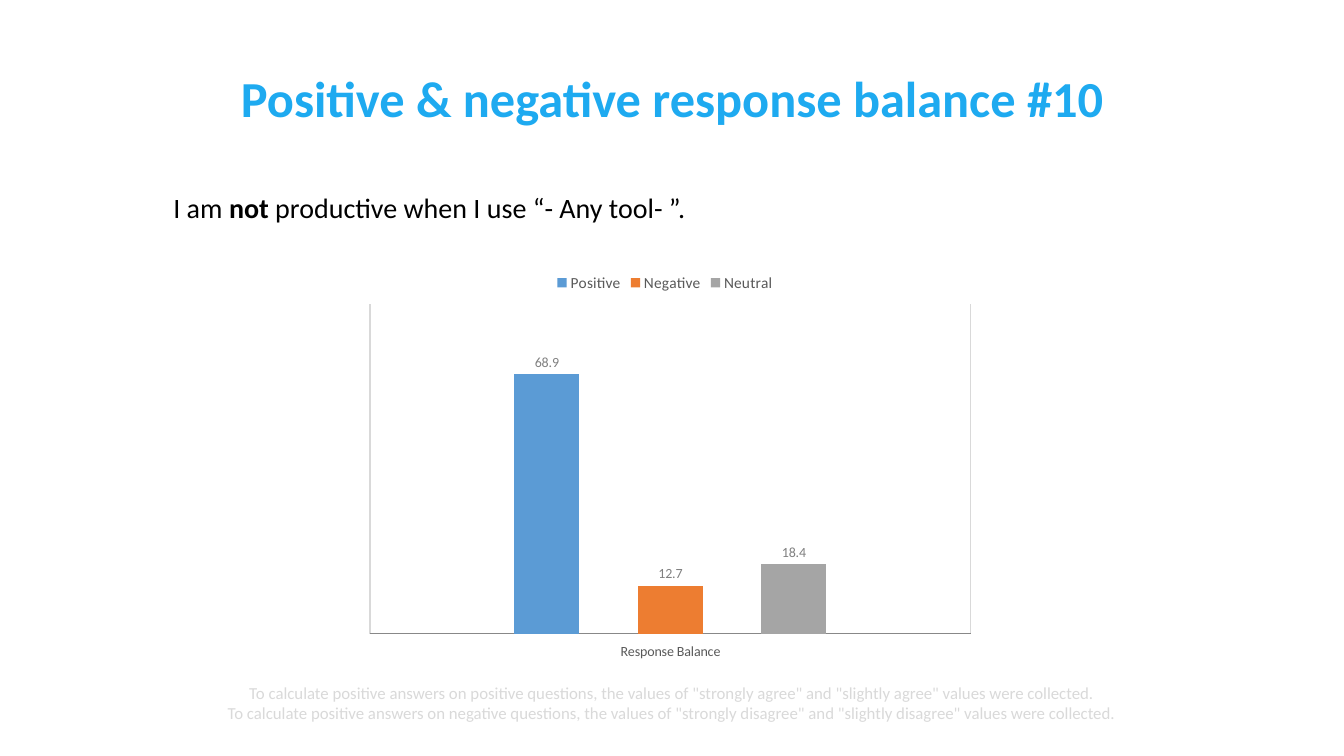
from lxml import etree
from pptx import Presentation
from pptx.chart.data import CategoryChartData
from pptx.dml.color import RGBColor
from pptx.enum.chart import (XL_CHART_TYPE, XL_LABEL_POSITION, XL_LEGEND_POSITION,
                             XL_TICK_LABEL_POSITION, XL_TICK_MARK)
from pptx.enum.text import MSO_ANCHOR, MSO_AUTO_SIZE, PP_ALIGN
from pptx.oxml.ns import qn
from pptx.util import Inches, Pt

CLUSTER = XL_CHART_TYPE.COLUMN_CLUSTERED
OUTSIDE = XL_LABEL_POSITION.OUTSIDE_END
ABOVE = XL_LEGEND_POSITION.TOP
LOW, HIDDEN = XL_TICK_LABEL_POSITION.LOW, XL_TICK_LABEL_POSITION.NONE
NO_TICK = XL_TICK_MARK.NONE
TOP, MIDDLE, BOTTOM = MSO_ANCHOR.TOP, MSO_ANCHOR.MIDDLE, MSO_ANCHOR.BOTTOM
LEFT, CENTER = PP_ALIGN.LEFT, PP_ALIGN.CENTER
GROW = MSO_AUTO_SIZE.SHAPE_TO_FIT_TEXT

THEME = {
    "font": "Calibri",
    "title": (36, "1EAAF0"),
    "body": (20, "000000"),
    "note": (12, "D9D9D9"),
    "chart": (10, "000000"),
    "axis": (10, "595959"),
    "legend": (11, "595959"),
    "label": (10, "808080"),
    "base": "888888",
    "grid": "D9D9D9",
}

TITLE = [[("Positive & negative response balance #10", True)]]
CLAIM = [[("I am ", False), ("not", True),
          (" productive when I use “- Any tool- ”.", False)]]
NOTES = [
    [('To calculate positive answers on positive questions, the values of '
      '"strongly agree" and "slightly agree" values were collected.', False)],
    [('To calculate positive answers on negative questions, the values of '
      '"strongly disagree" and "slightly disagree" values were collected.', False)],
]
GROUP = "Response Balance"
SERIES = [
    ("Positive", 68.9, "5B9BD5", "0.####"),
    ("Negative", 12.7, "ED7D31", "0.#"),
    ("Neutral", 18.4, "A5A5A5", "0.#"),
]
STEP = 17.5
PLOT = {"x": 0.023, "y": 0.107, "w": 0.972, "h": 0.83}


def style(font, role, bold=False):
    size, color = THEME[role]
    font.name = THEME["font"]
    font.size = Pt(size)
    font.bold = bold
    font.color.rgb = RGBColor.from_string(color)


def rule(line, color):
    line.width = Pt(1)
    line.color.rgb = RGBColor.from_string(color)


def write(slide, box, lines, role, anchor, align, spacing=1.0, before=0):
    frame = slide.shapes.add_textbox(*map(Inches, box)).text_frame
    frame.word_wrap = True
    frame.vertical_anchor = anchor
    frame.margin_left = frame.margin_right = Inches(0.05)
    frame.margin_top = frame.margin_bottom = Inches(0.05)
    for i, parts in enumerate(lines):
        para = frame.add_paragraph() if i else frame.paragraphs[0]
        para.alignment = align
        para.line_spacing = spacing
        para.space_before = Pt(before)
        for text, bold in parts:
            run = para.add_run()
            run.text = text
            style(run.font, role, bold)
    return frame


def place(chart):
    area = chart.element.find(".//" + qn("c:plotArea"))
    for old in area.findall(qn("c:layout")):
        area.remove(old)
    layout = etree.Element(qn("c:layout"))
    manual = etree.SubElement(layout, qn("c:manualLayout"))
    rules = [("layoutTarget", "inner"), ("xMode", "edge"), ("yMode", "edge")]
    for tag, value in rules + list(PLOT.items()):
        etree.SubElement(manual, qn("c:" + tag)).set("val", str(value))
    area.insert(0, layout)


def draw(slide, box):
    data = CategoryChartData()
    data.categories = [GROUP]
    for name, value, _, _ in SERIES:
        data.add_series(name, [value])
    chart = slide.shapes.add_chart(CLUSTER, *map(Inches, box), data).chart
    style(chart.font, "chart")
    chart.has_title = False
    chart.has_legend = True
    chart.legend.position = ABOVE
    chart.legend.include_in_layout = True
    style(chart.legend.font, "legend")

    base = chart.category_axis
    base.tick_label_position = LOW
    base.major_tick_mark = NO_TICK
    style(base.tick_labels.font, "axis")
    rule(base.format.line, THEME["base"])
    base.has_major_gridlines = True
    rule(base.major_gridlines.format.line, THEME["grid"])

    scale = chart.value_axis
    scale.minimum_scale, scale.maximum_scale = 0, 5 * STEP
    scale.major_unit = STEP
    scale.has_major_gridlines = False
    scale.major_tick_mark = NO_TICK
    scale.tick_label_position = HIDDEN
    scale.format.line.fill.background()

    plot = chart.plots[0]
    plot.gap_width, plot.overlap = 444, -90
    plot.vary_by_categories = False
    for bars, (_, _, color, form) in zip(plot.series, SERIES):
        bars.format.fill.solid()
        bars.format.fill.fore_color.rgb = RGBColor.from_string(color)
        labels = bars.data_labels
        labels.show_value = True
        labels.position = OUTSIDE
        labels.number_format = form
        labels.number_format_is_linked = False
        style(labels.font, "label")
    place(chart)


def main():
    deck = Presentation()
    deck.slide_width, deck.slide_height = Inches(13.33), Inches(7.5)
    slide = deck.slides.add_slide(deck.slide_layouts[6])
    notes = write(slide, (0.05, 6.73, 13.23, 0.48), NOTES, "note", MIDDLE, CENTER)
    notes.auto_size = GROW
    write(slide, (1.67, 0.67, 10, 0.65), TITLE, "title", BOTTOM, CENTER, 0.9)
    write(slide, (1.67, 1.67, 10, 1.5), CLAIM, "body", TOP, LEFT, 1.5, 10)
    draw(slide, (3.53, 2.6, 6.13, 3.94))
    deck.save("out.pptx")


if __name__ == "__main__":
    main()
